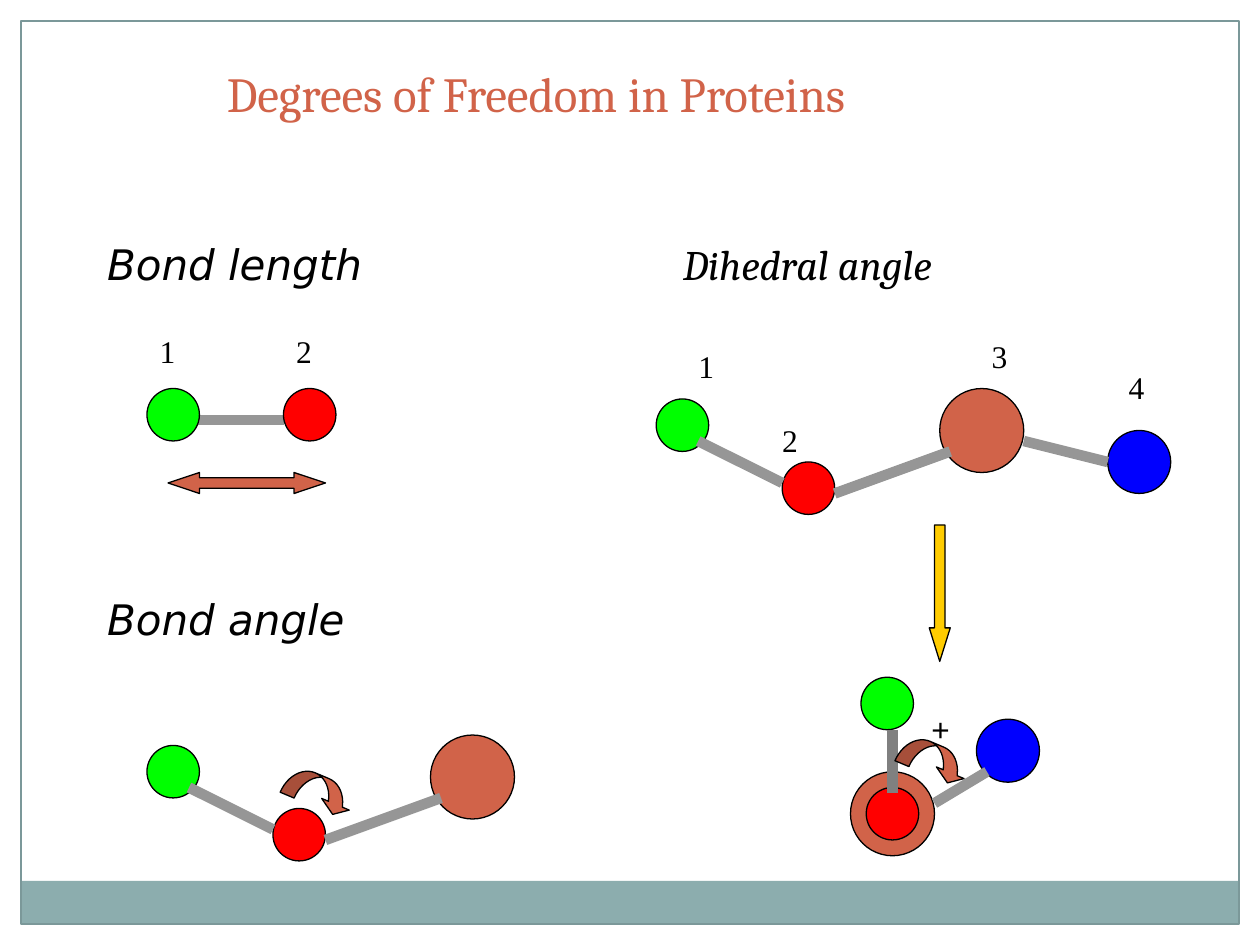
from lxml import etree
from pptx import Presentation
from pptx import util as u
from pptx.dml.color import RGBColor
from pptx.enum import shapes, text
from pptx.oxml import ns

# The slide is a grid of 240 columns by 180 rows, 24 to the inch
CELL = u.Inches(1) / 24
GREEN, RED, BROWN, BLUE = "00FF00", "FF0000", "D16349", "0000FF"
BLACK, WHITE, GREY = "000000", "FFFFFF", "969696"
SMALL, MEDIUM, LARGE = 10, 12, 16  # atom diameters
PRESET = shapes.MSO_SHAPE


def cells(*values):
    return [u.Emu(round(value * CELL)) for value in values]


def color(value):
    return RGBColor.from_string(value)


def add_shape(slide, kind, box, fill=None, line=BLACK, adjustments=(), rotation=0):
    shape = slide.shapes.add_shape(kind, *cells(*box))
    shape.shadow.inherit = False
    for index, value in enumerate(adjustments):
        shape.adjustments[index] = value
    if fill:
        shape.fill.solid()
        shape.fill.fore_color.rgb = color(fill)
    else:
        shape.fill.background()
    if line:
        shape.line.color.rgb = color(line)
        shape.line.width = u.Pt(0.75)
    else:
        shape.line.fill.background()
    shape.rotation = rotation


def add_atom(slide, left, top, size, fill):
    add_shape(slide, PRESET.OVAL, (left, top, size, size), fill)


def add_bond(slide, left, top, start, end, line=GREY):
    connector = slide.shapes.add_connector(
        shapes.MSO_CONNECTOR.STRAIGHT,
        *cells(left + start[0], top + start[1], left + end[0], top + end[1]))
    connector.line.color.rgb = color(line)
    connector.line.width = u.Pt(6)
    etree.SubElement(connector._element.spPr, ns.qn("a:effectLst"))


def add_turn(slide, left, top):
    """Curved arrow that marks a rotation."""
    add_shape(slide, PRESET.CURVED_DOWN_ARROW, (left, top, 13.7, 6), BROWN,
              adjustments=(0.48, 0.95, 0.33), rotation=22.9)


def write(shape, words, size, font, fill=BLACK, italic=False):
    frame = shape.text_frame
    frame.text = words
    frame.word_wrap = False
    frame.auto_size = text.MSO_AUTO_SIZE.NONE
    frame.vertical_anchor = text.MSO_ANCHOR.TOP
    frame.margin_left = frame.margin_right = u.Inches(0.05)
    frame.margin_top = frame.margin_bottom = u.Inches(0.05)
    for paragraph in frame.paragraphs:
        paragraph.alignment = text.PP_ALIGN.LEFT
        for run in paragraph.runs:
            run.font.size = u.Pt(size)
            run.font.name = font
            run.font.italic = italic
            run.font.color.rgb = color(fill)
    return frame


def add_label(slide, left, top, words, font="Times New Roman"):
    write(slide.shapes.add_textbox(*cells(left, top, 6, 9)), words, 18, font)


def add_frame(slide):
    """White margins, footer band and thin border."""
    margin = 4
    for box in ((0, 0, 240, margin), (240 - margin, 0, margin, 180), (0, 0, margin, 180)):
        add_shape(slide, PRESET.RECTANGLE, box, WHITE, None)
    add_shape(slide, PRESET.RECTANGLE, (margin, 167.8, 232, 8.2), "8CADAE", None)
    add_shape(slide, PRESET.RECTANGLE, (margin, margin, 232, 172), None, "7B9899")


def add_headings(slide):
    title = slide.shapes.title
    title.left, title.top, title.width, title.height = cells(42, 10.8, 132.7, 13)
    write(title, "Degrees of Freedom in Proteins", 28, "Cambria", BROWN)

    left_box = slide.shapes.add_textbox(*cells(19.2, 44.2, 51, 76))
    frame = write(left_box, "Bond length\nBond angle", 24, "DejaVu Sans", italic=True)
    frame.paragraphs[1].space_before = u.Pt(174)

    right_box = slide.shapes.add_textbox(*cells(128.9, 44.2, 56.4, 11.3))
    write(right_box, "Dihedral angle", 24, "Cambria", italic=True)


def add_chain(slide, left, top):
    """Three bonded atoms, shared by both angle drawings."""
    add_atom(slide, left, top + 2, SMALL, GREEN)
    add_atom(slide, left + 24, top + 14, SMALL, RED)
    add_atom(slide, left + 54, top, LARGE, BROWN)
    add_bond(slide, left, top, (8, 10), (24, 18))
    add_bond(slide, left, top, (34, 20), (56, 12))


def add_bond_length(slide, left, top):
    add_bond(slide, left, top, (8, 6), (26, 6))
    for number, (offset, fill) in enumerate(((0, GREEN), (26, RED)), start=1):
        add_atom(slide, left + offset, top, SMALL, fill)
        add_label(slide, left + offset + 1.2, top - 12, str(number))
    add_shape(slide, PRESET.LEFT_RIGHT_ARROW, (left + 4, top + 16, 30, 4), BROWN,
              adjustments=(0.5, 1.5))


def add_bond_angle(slide, left, top):
    add_chain(slide, left, top)
    add_turn(slide, left + 26, top + 7.8)


def add_dihedral(slide, left, top):
    add_chain(slide, left, top)
    add_atom(slide, left + 86, top + 8, MEDIUM, BLUE)
    add_bond(slide, left, top, (70, 10), (86, 14))
    offsets = ((6.8, -9), (22.8, 5), (62.7, -11), (88.8, -5))
    for number, (across, down) in enumerate(offsets, start=1):
        add_label(slide, left + across, top + down, str(number))
    add_shape(slide, PRESET.DOWN_ARROW, (left + 52, top + 26, 4, 26), "FFCC00",
              adjustments=(0.5, 1.6))


def add_end_view(slide, left, top):
    """Dihedral seen along its central bond."""
    add_atom(slide, left, top + 18, LARGE, BROWN)
    add_atom(slide, left + 3, top + 21, SMALL, RED)
    add_atom(slide, left + 2, top, SMALL, GREEN)
    add_atom(slide, left + 24, top + 8, MEDIUM, BLUE)
    add_bond(slide, left, top, (8, 10), (8, 22), "808080")
    add_bond(slide, left, top, (16, 24), (26, 18))
    add_turn(slide, left + 9.1, top + 12.8)
    add_label(slide, left + 14.2, top + 5, "+", "Arial")


def main():
    presentation = Presentation()
    presentation.slide_width, presentation.slide_height = cells(240, 180)
    slide = presentation.slides.add_slide(presentation.slide_layouts[5])
    add_frame(slide)
    add_headings(slide)
    add_bond_length(slide, 28, 74)
    add_bond_angle(slide, 28, 140)
    add_dihedral(slide, 125, 74)
    add_end_view(slide, 162, 129)
    presentation.save("out.pptx")


if __name__ == "__main__":
    main()
